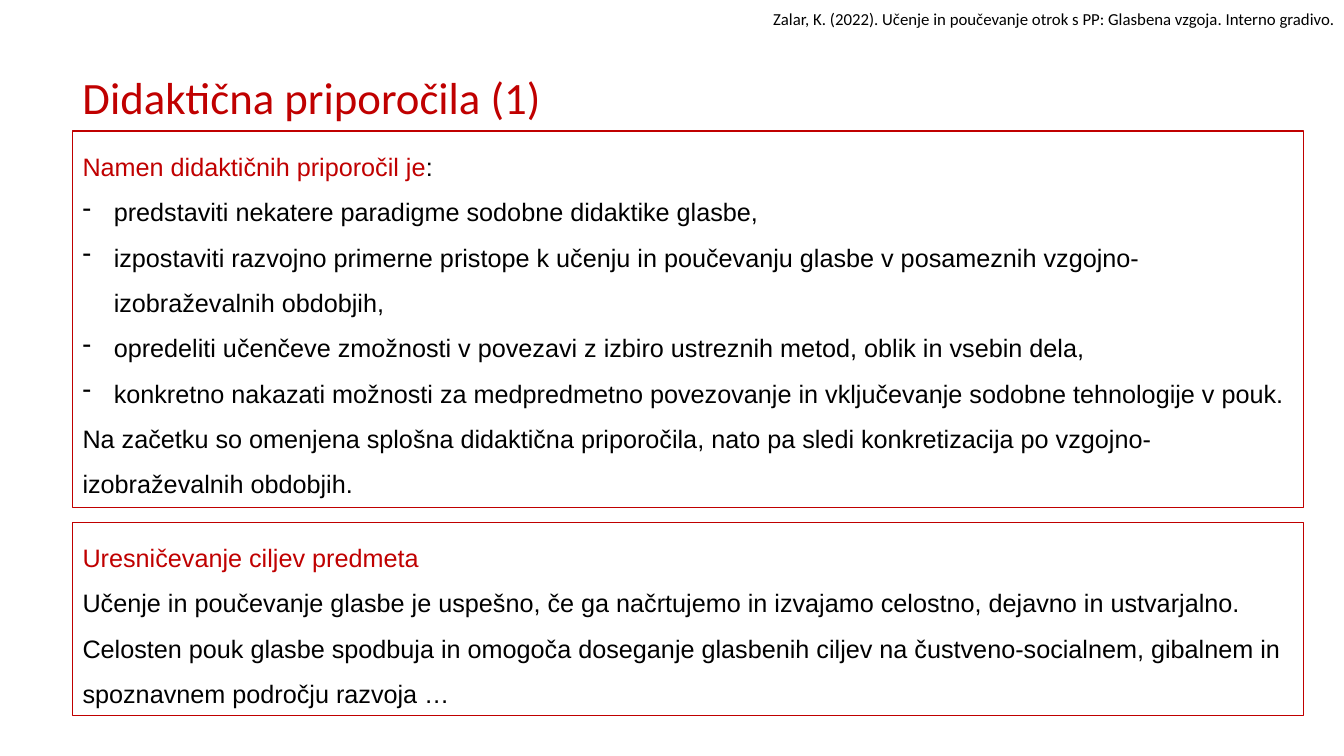
from lxml import etree
from pptx import Presentation
from pptx import util as u
from pptx.dml.color import RGBColor
from pptx.enum import shapes, text
from pptx.oxml.ns import qn

RED = RGBColor(0xC0, 0x00, 0x00)
BLACK = RGBColor(0x00, 0x00, 0x00)
PX = u.Inches(1) // 100  # EMU per px
INDENT = 31


class Deck:
    heading_font = "Calibri"
    body_font = "Arial"
    body_size = 18

    def __init__(self, width, height):
        self.prs = Presentation()
        self.prs.slide_width, self.prs.slide_height = width * PX, height * PX
        self.s = self.prs.slides.add_slide(self.prs.slide_layouts[6])

    def style(self, r, font, size, color):
        r.font.name, r.font.size, r.font.color.rgb = font, u.Pt(size), color

    def heading(self, box, words, size, color):
        """One line of text, centred vertically in its box."""
        tf = self.s.shapes.add_textbox(*(v * PX for v in box)).text_frame
        tf.word_wrap = True
        tf.vertical_anchor = text.MSO_ANCHOR.MIDDLE
        p = tf.paragraphs[0]
        p.text = words
        p.line_spacing = 0.9
        self.style(p.runs[0], self.heading_font, size, color)

    def panel(self, box, paragraphs):
        """Red frame; each paragraph is (bulleted, [(words, color), ...])."""
        sp = self.s.shapes.add_shape(shapes.MSO_SHAPE.RECTANGLE, *(v * PX for v in box))
        sp.shadow.inherit = False
        sp.fill.background()
        sp.line.color.rgb, sp.line.width = RED, u.Pt(0.75)
        tf = sp.text_frame
        tf.word_wrap = True
        tf.vertical_anchor = text.MSO_ANCHOR.TOP
        for i, (bulleted, runs) in enumerate(paragraphs):
            p = tf.add_paragraph() if i else tf.paragraphs[0]
            p.alignment = text.PP_ALIGN.LEFT
            p.line_spacing = 1.5
            if bulleted:
                self.bullet(p)
            for words, color in runs:
                r = p.add_run()
                r.text = words
                self.style(r, self.body_font, self.body_size, color)

    def bullet(self, p):
        pPr = p._p.get_or_add_pPr()
        pPr.set("marL", str(INDENT * PX))
        pPr.set("indent", str(-INDENT * PX))
        etree.SubElement(pPr, qn("a:buFontTx"))
        etree.SubElement(pPr, qn("a:buChar")).set("char", "-")


def main():
    deck = Deck(1333, 750)

    # Source reference and slide title
    deck.heading((757, 0, 583, 40),
                 "Zalar, K. (2022). Učenje in poučevanje otrok s PP: Glasbena vzgoja. Interno gradivo.",
                 12, BLACK)
    deck.heading((72, 53, 583, 92), "Didaktična priporočila (1)", 32, RED)

    # Purpose of the recommendations
    aims = [
        "predstaviti nekatere paradigme sodobne didaktike glasbe,",
        "izpostaviti razvojno primerne pristope k učenju in poučevanju glasbe "
        "v posameznih vzgojno-izobraževalnih obdobjih,",
        "opredeliti učenčeve zmožnosti v povezavi z izbiro ustreznih metod, oblik in vsebin dela,",
        "konkretno nakazati možnosti za medpredmetno povezovanje "
        "in vključevanje sodobne tehnologije v pouk.",
    ]
    deck.panel((72, 130, 1221, 374), [
        (False, [("Namen didaktičnih priporočil je", RED), (":", BLACK)]),
        *((True, [(aim, BLACK)]) for aim in aims),
        (False, [("Na začetku so omenjena splošna didaktična priporočila, nato pa sledi "
                  "konkretizacija po vzgojno-izobraževalnih obdobjih.", BLACK)]),
    ])

    # Achieving the goals of the subject
    deck.panel((72, 518, 1221, 192), [
        (False, [("Uresničevanje ciljev predmeta", RED)]),
        (False, [("Učenje in poučevanje glasbe je uspešno, če ga načrtujemo in izvajamo celostno, "
                  "dejavno in ustvarjalno. Celosten pouk glasbe spodbuja in omogoča doseganje "
                  "glasbenih ciljev na čustveno-socialnem, gibalnem in spoznavnem področju "
                  "razvoja …", BLACK)]),
    ])

    deck.prs.save("out.pptx")


if __name__ == "__main__":
    main()
